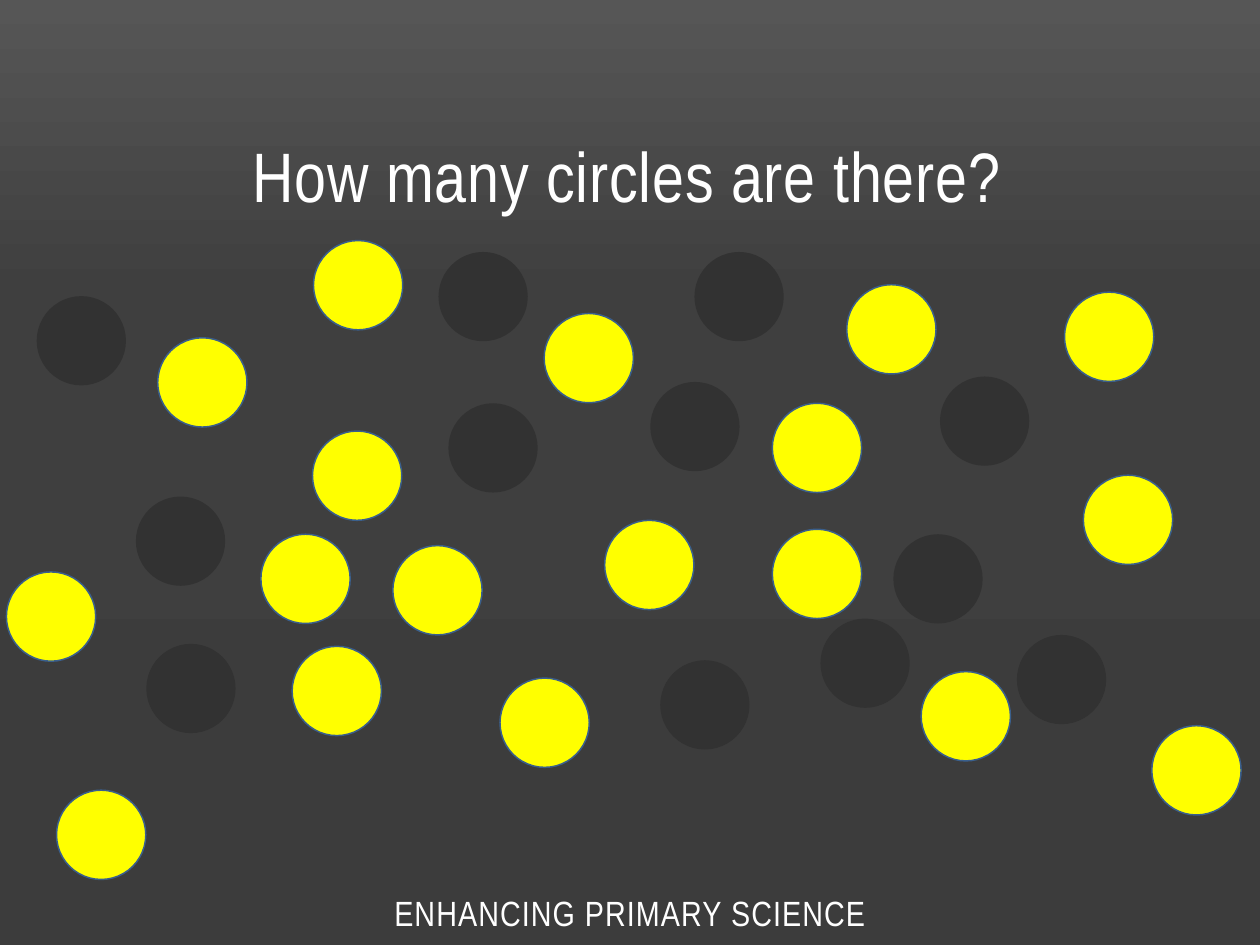
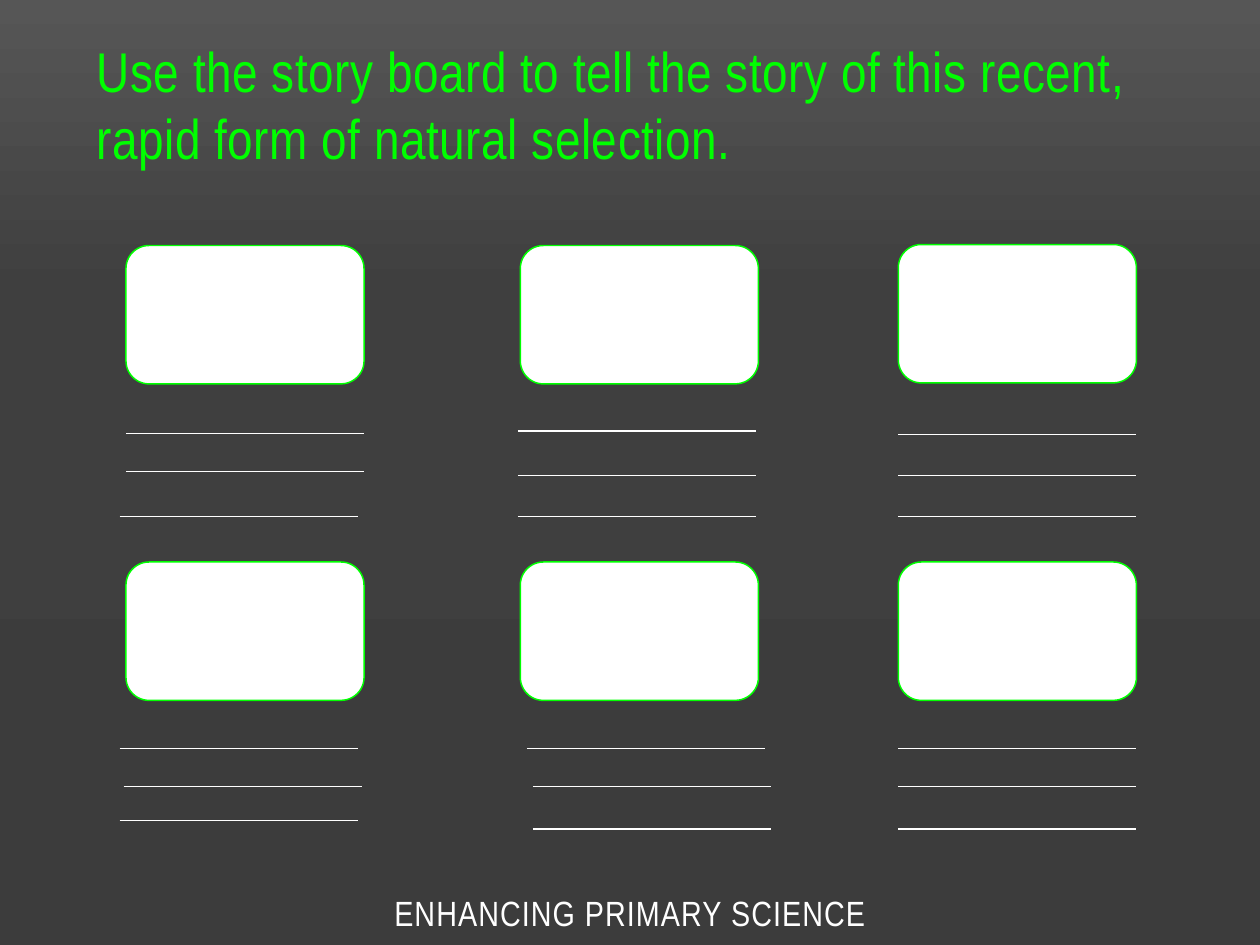
"""Build the circle-counting slide and the natural selection story board."""
from copy import deepcopy
from dataclasses import dataclass
from typing import NamedTuple, Optional

from pptx import Presentation
from pptx.dml.color import RGBColor
from pptx.enum.shapes import MSO_CONNECTOR, MSO_SHAPE
from pptx.enum.text import MSO_ANCHOR, PP_ALIGN
from pptx.oxml.ns import qn
from pptx.presentation import Presentation as Deck
from pptx.slide import Slide
from pptx.util import Cm, Pt
from lxml.etree import SubElement

WHITE = RGBColor(0xFF, 0xFF, 0xFF)
GREEN = RGBColor(0x00, 0xFF, 0x00)
YELLOW = RGBColor(0xFF, 0xFF, 0x00)
CHARCOAL = RGBColor(0x32, 0x32, 0x32)
BLUE = RGBColor(0x3A, 0x5F, 0x8C)
BACKDROP = (
    (0, RGBColor(0x56, 0x56, 0x56)),
    (0.31, RGBColor(0x3F, 0x3F, 0x3F)),
    (1, RGBColor(0x3C, 0x3C, 0x3C)),
)

FONT = "Arial Narrow"
SLIDE_WIDTH, SLIDE_HEIGHT = 25.4, 19.05
CIRCLE_SIZE = 1.8
FRAME_WIDTH, FRAME_HEIGHT = 4.8, 2.79


class Point(NamedTuple):
    """A position in centimetres."""

    x: float
    y: float


class Box(NamedTuple):
    """A left, top, width and height in centimetres."""

    left: float
    top: float
    width: float
    height: float


@dataclass(frozen=True)
class Scene:
    """A story board frame and the starts of its writing lines."""

    corner: Point
    writing_lines: tuple[Point, ...]


def writing_lines(lefts: tuple[float, ...], heights: tuple[float, ...]) -> tuple[Point, ...]:
    """Pair the left ends of writing lines with their heights."""
    return tuple(Point(x, y) for x, y in zip(lefts, heights))


DARK_CIRCLES = (
    Point(0.74, 5.97), Point(8.84, 5.08), Point(14, 5.08), Point(13.11, 7.7),
    Point(18.95, 7.59), Point(9.04, 8.13), Point(2.74, 10.01), Point(18.01, 10.77),
    Point(16.54, 12.47), Point(20.5, 12.8), Point(2.95, 12.98), Point(13.31, 13.31),
)
YELLOW_CIRCLES = (
    Point(6.32, 4.85), Point(17.07, 5.74), Point(21.46, 5.89), Point(10.97, 6.32),
    Point(3.18, 6.81), Point(15.57, 8.13), Point(6.3, 8.69), Point(21.84, 9.58),
    Point(12.19, 10.49), Point(15.57, 10.67), Point(5.26, 10.77), Point(7.92, 11),
    Point(0.13, 11.53), Point(5.89, 13.03), Point(18.57, 13.54), Point(10.08, 13.67),
    Point(23.22, 14.63), Point(1.14, 15.93),
)
SCENES = (
    Scene(Point(2.54, 4.95), writing_lines((2.54, 2.54, 2.41), (8.74, 9.5, 10.41))),
    Scene(Point(10.49, 4.95), writing_lines((10.44,) * 3, (8.69, 9.58, 10.41))),
    Scene(Point(18.11, 4.93), writing_lines((18.11,) * 3, (8.76, 9.58, 10.41))),
    Scene(Point(2.54, 11.33), writing_lines((2.41, 2.49, 2.41), (15.09, 15.85, 16.54))),
    Scene(Point(10.49, 11.33), writing_lines((10.62, 10.74, 10.74), (15.09, 15.85, 16.71))),
    Scene(Point(18.11, 11.33), writing_lines((18.11,) * 3, (15.09, 15.85, 16.71))),
)


def add_text(
    slide: Slide,
    text: str,
    box: Box,
    *,
    size: float,
    color: RGBColor = WHITE,
    align: PP_ALIGN = PP_ALIGN.CENTER,
    anchor: MSO_ANCHOR = MSO_ANCHOR.MIDDLE,
    tracking: float = 0,
) -> None:
    """Add one wrapped paragraph; tracking is letter spacing in points."""
    frame = slide.shapes.add_textbox(*map(Cm, box)).text_frame
    frame.word_wrap = True
    frame.vertical_anchor = anchor
    paragraph = frame.paragraphs[0]
    paragraph.alignment = align
    run = paragraph.add_run()
    run.text = text
    run.font.name = FONT
    run.font.size = Pt(size)
    run.font.color.rgb = color
    run.font._element.set("spc", str(round(tracking * 100)))


def add_figure(
    slide: Slide, kind: MSO_SHAPE, box: Box, fill: RGBColor, outline: Optional[RGBColor] = None
) -> None:
    """Add a filled preset shape with an optional thin outline."""
    figure = slide.shapes.add_shape(kind, *map(Cm, box))
    figure.shadow.inherit = False
    figure.fill.solid()
    figure.fill.fore_color.rgb = fill
    if outline is None:
        figure.line.fill.background()
    else:
        figure.line.color.rgb = outline
        figure.line.width = Pt(0.85)


def add_writing_line(slide: Slide, start: Point) -> None:
    """Add a white line as wide as a frame."""
    x, y = start
    line = slide.shapes.add_connector(
        MSO_CONNECTOR.STRAIGHT, Cm(x), Cm(y), Cm(x + FRAME_WIDTH), Cm(y)
    )
    line.line.color.rgb = WHITE
    line.line.width = Pt(0.75)
    SubElement(line._element.spPr, qn("a:effectLst"))


def paint_backdrop(slide: Slide) -> None:
    """Fill the background with the grey gradient, lightest at the top."""
    fill = slide.background.fill
    fill.gradient()
    fill.gradient_angle = 270
    stop_list = slide.element.find(".//" + qn("a:gsLst"))
    stop_list.append(deepcopy(stop_list[0]))
    for stop, (position, color) in zip(fill.gradient_stops, BACKDROP):
        stop.position = position
        stop.color.rgb = color


def add_slide(deck: Deck) -> Slide:
    """Add a blank slide with the shared backdrop and footer."""
    slide = deck.slides.add_slide(deck.slide_layouts[6])
    paint_backdrop(slide)
    add_text(
        slide, "ENHANCING PRIMARY SCIENCE", Box(0, 17.73, SLIDE_WIDTH, 1.32),
        size=20, tracking=0.6,
    )
    return slide


def build_circles(deck: Deck) -> None:
    """Build the slide that asks for the number of circles."""
    slide = add_slide(deck)
    add_text(
        slide, "How many circles are there?", Box(2.74, 1.32, 19.81, 3.18),
        size=40, anchor=MSO_ANCHOR.BOTTOM, tracking=0.5,
    )
    for corners, fill, outline in (
        (DARK_CIRCLES, CHARCOAL, None),
        (YELLOW_CIRCLES, YELLOW, BLUE),
    ):
        for corner in corners:
            circle = Box(*corner, CIRCLE_SIZE, CIRCLE_SIZE)
            add_figure(slide, MSO_SHAPE.OVAL, circle, fill, outline)


def build_story_board(deck: Deck) -> None:
    """Build the slide with empty frames and writing lines."""
    slide = add_slide(deck)
    add_text(
        slide,
        "Use the story board to tell the story of this recent, rapid form of natural selection.",
        Box(1.7, 0.61, 22.02, 11.43),
        size=32, color=GREEN, align=PP_ALIGN.LEFT, anchor=MSO_ANCHOR.TOP, tracking=0.3,
    )
    for scene in SCENES:
        frame = Box(*scene.corner, FRAME_WIDTH, FRAME_HEIGHT)
        add_figure(slide, MSO_SHAPE.ROUNDED_RECTANGLE, frame, WHITE, GREEN)
        for start in scene.writing_lines:
            add_writing_line(slide, start)


def main() -> None:
    """Build and save the deck."""
    deck = Presentation()
    deck.slide_width, deck.slide_height = Cm(SLIDE_WIDTH), Cm(SLIDE_HEIGHT)
    build_circles(deck)
    build_story_board(deck)
    deck.save("out.pptx")


if __name__ == "__main__":
    main()
